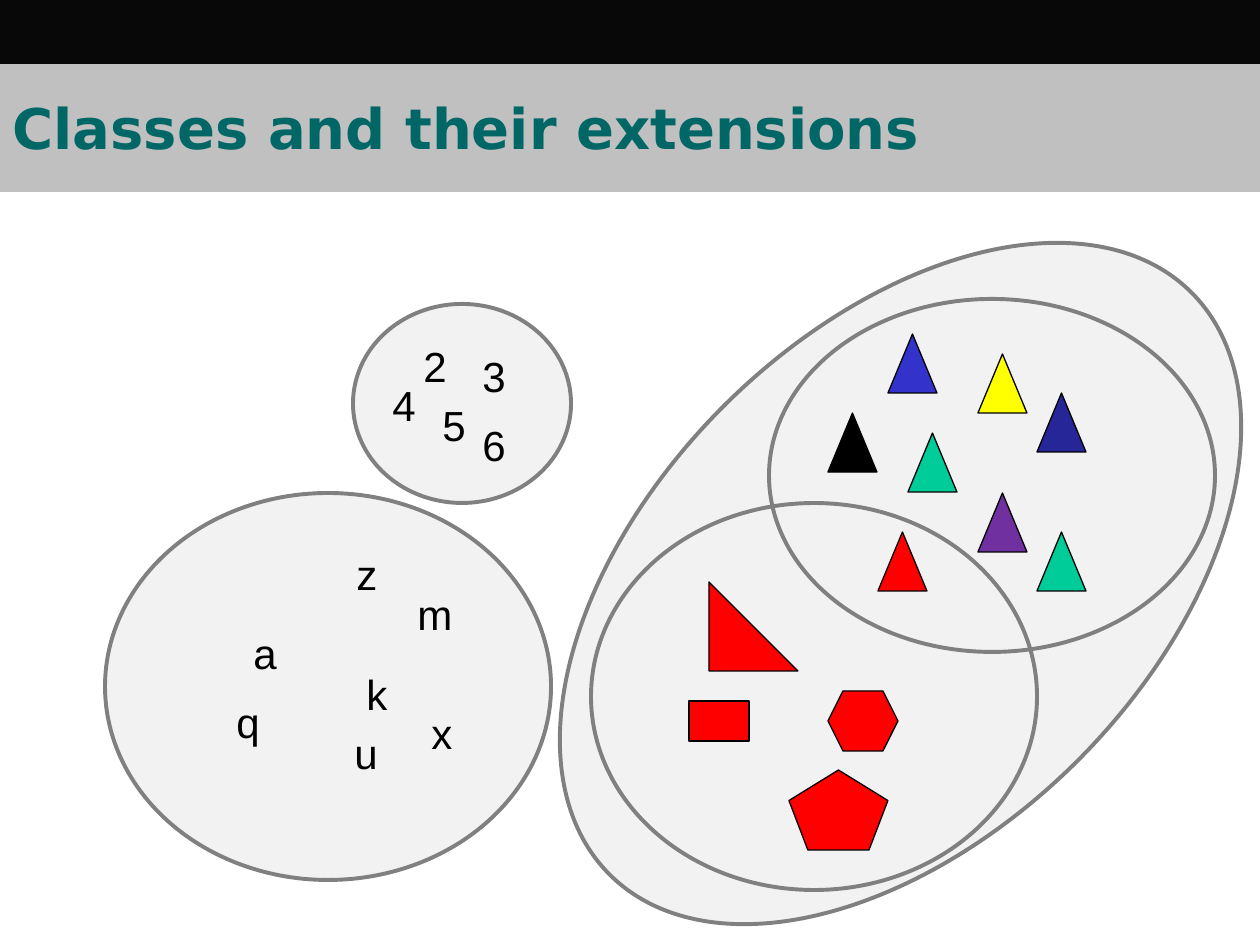
from pptx import Presentation
from pptx.dml.color import RGBColor
from pptx.enum.shapes import MSO_SHAPE as SHAPE
from pptx.enum.text import MSO_ANCHOR as ANCHOR, MSO_AUTO_SIZE as AUTO_SIZE, PP_ALIGN as ALIGN
from pptx.util import Pt

EMU_PER_PX = 914400 / 126
BLACK, GREY, PALE, RED, GREEN = "000000", "808080", "F2F2F2", "FF0000", "00CC99"

TRIANGLES = [
    (888, 334, "3333CC"), (908, 433, GREEN), (978, 354, "FFFF00"), (878, 532, RED),
    (1037, 393, "262699"), (978, 493, "7030A0"), (828, 413, BLACK), (1037, 532, GREEN),
]
RED_FIGURES = [
    (SHAPE.RECTANGLE, (689, 701, 60, 40)),
    (SHAPE.REGULAR_PENTAGON, (789, 770, 99, 80)),
    (SHAPE.HEXAGON, (828, 691, 70, 60)),
    (SHAPE.RIGHT_TRIANGLE, (709, 582, 89, 89)),
]
MEMBERS = [
    ("a", 265, 621), ("z", 367, 542), ("u", 366, 721), ("q", 248, 690),
    ("k", 377, 662), ("m", 435, 582), ("x", 442, 701),
    ("2", 435, 334), ("3", 494, 344), ("6", 494, 413), ("5", 454, 393), ("4", 404, 373),
]


def px(length):
    return round(length * EMU_PER_PX)


def colour(hex_code):
    return RGBColor.from_string(hex_code)


def set_all(target, values):
    for name, value in values.items():
        setattr(target, name, value)


def paint(shape, fill):
    if fill:
        shape.fill.solid()
        shape.fill.fore_color.rgb = colour(fill)
    else:
        shape.fill.background()


def add_figure(slide, kind, box, fill, line=BLACK, weight=0.75):
    figure = slide.shapes.add_shape(kind, *map(px, box))
    figure.shadow.inherit = False
    paint(figure, fill)
    if line:
        figure.line.color.rgb = colour(line)
        figure.line.width = Pt(weight)
    else:
        figure.line.fill.background()
    return figure


def add_class(slide, box, fill=None, rotation=0):
    add_figure(slide, SHAPE.OVAL, box, fill, GREY, 2.25).rotation = rotation


def write(frame, text, align, hex_code, font):
    frame.text = text
    paragraph = frame.paragraphs[0]
    paragraph.alignment = align
    run_font = paragraph.runs[0].font
    set_all(run_font, font)
    run_font.color.rgb = colour(hex_code)


def add_member(slide, text, centre, top):
    width = 60 if text == "m" else 48
    label = slide.shapes.add_textbox(*map(px, (centre - width / 2, top, width, 64)))
    frame = label.text_frame
    set_all(frame, {"word_wrap": False, "auto_size": AUTO_SIZE.SHAPE_TO_FIT_TEXT})
    write(frame, text, ALIGN.CENTER, BLACK, {"name": "Arial", "size": Pt(24)})


def set_title(slide, text):
    title = slide.shapes.title
    set_all(title, {"left": 0, "top": px(63), "width": px(1260), "height": px(129)})
    paint(title, "C0C0C0")
    frame = title.text_frame
    set_all(frame, {"vertical_anchor": ANCHOR.MIDDLE, "auto_size": AUTO_SIZE.NONE})
    write(frame, text, ALIGN.LEFT, "006666",
          {"name": "DejaVu Sans", "size": Pt(32), "bold": True})


def main():
    deck = Presentation()
    set_all(deck, {"slide_width": px(1260), "slide_height": px(945)})
    slide = deck.slides.add_slide(deck.slide_layouts[5])

    add_class(slide, (489, 333, 823, 501), PALE, 315)
    add_class(slide, (591, 503, 446, 387))
    add_figure(slide, SHAPE.RECTANGLE, (0, 0, 1260, 64), "080808", None)
    set_title(slide, "Classes and their extensions")
    add_class(slide, (105, 493, 446, 387), PALE)
    add_class(slide, (769, 299, 446, 353))
    add_class(slide, (353, 304, 218, 199), PALE)

    for left, top, fill in TRIANGLES:
        add_figure(slide, SHAPE.ISOSCELES_TRIANGLE, (left, top, 49, 59), fill)
    for kind, box in RED_FIGURES:
        add_figure(slide, kind, box, RED)
    for text, centre, top in MEMBERS:
        add_member(slide, text, centre, top)

    deck.save("out.pptx")


if __name__ == "__main__":
    main()
